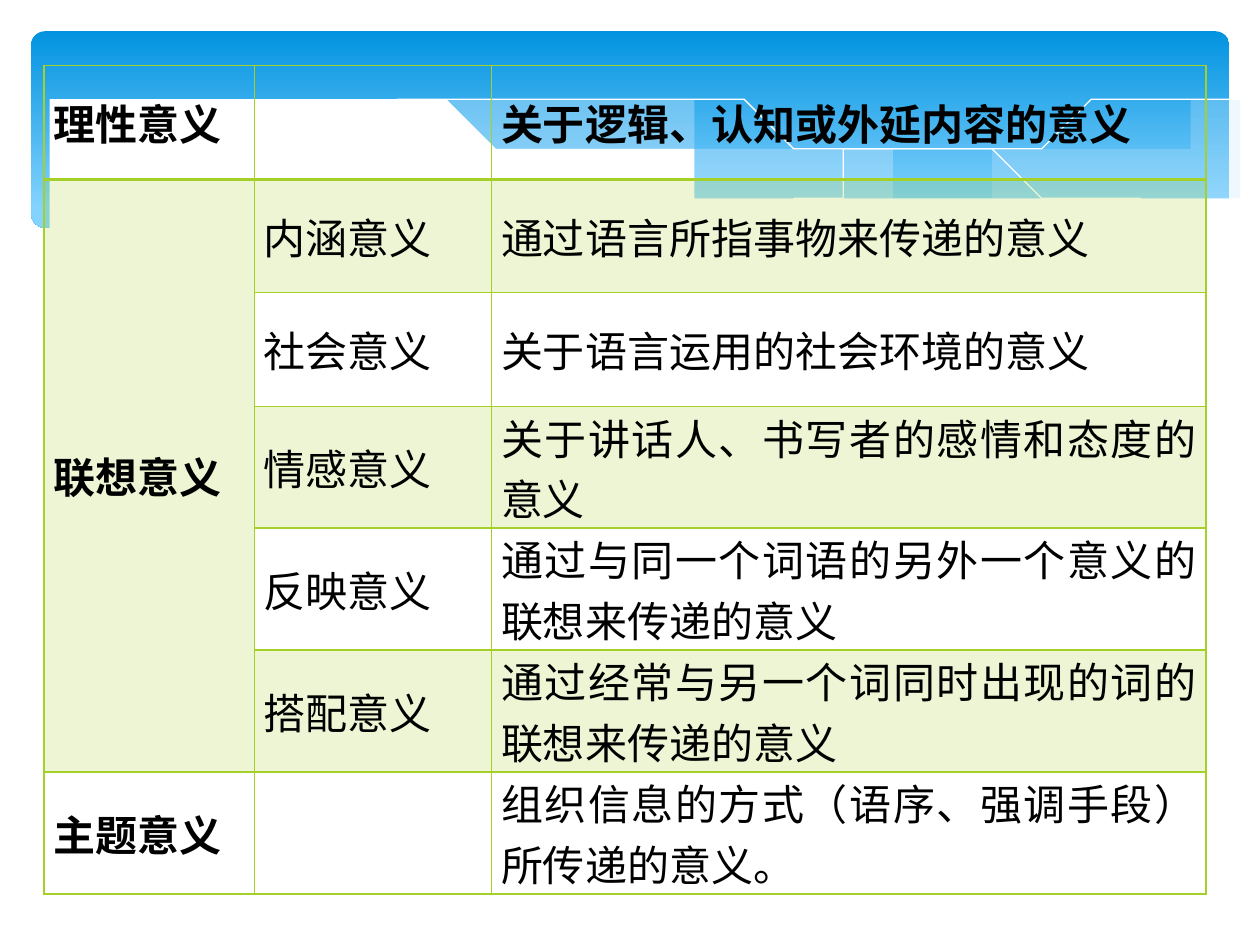
from dataclasses import dataclass
from itertools import pairwise

from lxml.etree import SubElement
from pptx import Presentation
from pptx.dml.color import RGBColor
from pptx.enum.shapes import MSO_SHAPE
from pptx.enum.text import MSO_ANCHOR, PP_ALIGN
from pptx.oxml.ns import qn
from pptx.util import Cm, Pt

Point = tuple[float, float]


@dataclass(frozen=True)
class Theme:
    font: str = "Arial"
    text_size: int = 24
    text: str = "000000"
    banner_top: str = "0293E0"
    banner_bottom: str = "83D3FE"
    mist: str = "C6E7FC"
    white: str = "FFFFFF"
    green: str = "A5D028"
    band_opacity: int = 20
    border: int = 1
    header_border: int = 2


@dataclass(frozen=True)
class Wave:
    """Smooth edges in cm, joined by straight sides; opacity in percent."""
    edges: tuple[tuple[Point, ...], ...]
    opacity: int = 100
    color: str = ""
    closed: bool = True


@dataclass(frozen=True)
class Meaning:
    group: str
    kind: str
    description: str


THEME = Theme()

WAVES = [
    Wave((((24.78, 2.39), (23.39, 2.64), (21.87, 3), (19.13, 3.63), (16.79, 4.06)),
          ((16.79, 4.06), (18.59, 4.24), (20.4, 4.37), (22.38, 4.24), (23.75, 3.96),
           (24.79, 3.58))), opacity=29, color=THEME.mist),
    Wave((((22.68, 4.24), (20.5, 3.91), (17.93, 3.4), (15.98, 2.95), (13.74, 2.46),
           (11.81, 2.18), (9.65, 2.03), (8.33, 2.06), (7.26, 2.18)),
          ((7.26, 2.18), (9.19, 2.46), (11.4, 2.95), (14.38, 3.63), (16.51, 4.01),
           (18.69, 4.29), (20.78, 4.39), (22.68, 4.24))), opacity=40, color=THEME.mist),
    Wave((((7.85, 2.29), (8.74, 2.13), (10.57, 2.06), (12.95, 2.18), (15.44, 2.49),
           (18.47, 3.05), (21.11, 3.68), (23.04, 4.22)),), color=THEME.white, closed=False),
    Wave((((15.57, 3.84), (17.65, 3.3), (19.71, 2.82), (22, 2.36), (23.47, 2.13),
           (24.77, 2.03)),), color=THEME.white, closed=False),
    Wave((((24.82, 3.58), (23.62, 3.99), (22.23, 4.24), (20.55, 4.34), (18.44, 4.24),
           (15.9, 3.89), (13.44, 3.38), (11.35, 2.9), (9.27, 2.44), (6.88, 2.08),
           (4.5, 1.98), (2.69, 2.11), (1.5, 2.36), (0.58, 2.72)),
          ((0.58, 5.69), (24.82, 5.69))), color=THEME.white),
]

MEANINGS = [
    Meaning("理性意义", "", "关于逻辑、认知或外延内容的意义"),
    Meaning("联想意义", "内涵意义", "通过语言所指事物来传递的意义"),
    Meaning("", "社会意义", "关于语言运用的社会环境的意义"),
    Meaning("", "情感意义", "关于讲话人、书写者的感情和态度的意义"),
    Meaning("", "反映意义", "通过与同一个词语的另外一个意义的联想来传递的意义"),
    Meaning("", "搭配意义", "通过经常与另一个词同时出现的词的联想来传递的意义"),
    Meaning("主题意义", "", "组织信息的方式（语序、强调手段）所传递的意义。"),
]
COLUMN_WIDTHS = (4.24, 4.78, 14.4)
ROW_HEIGHTS = (2.29,) * 3 + (2.39,) * 4
ASSOCIATIVE_ROWS = (1, 5)


def smooth(knots: tuple[Point, ...], steps: int = 5) -> list[Point]:
    """Sample a Catmull-Rom curve through the knots."""
    if len(knots) < 3:
        return list(knots)
    padded = (knots[0], *knots, knots[-1])
    points = [knots[0]]
    for index, (start, end) in enumerate(pairwise(knots)):
        before, after = padded[index], padded[index + 3]
        for step in range(1, steps + 1):
            t = step / steps
            points.append(tuple(
                b + 0.5 * t * (c - a + t * (2 * a - 5 * b + 4 * c - d
                                            + t * (3 * (b - c) + d - a)))
                for a, b, c, d in zip(before, start, end, after)))
    return points


def paint(fill, element, color: str, opacity: int = 100) -> None:
    fill.solid()
    fill.fore_color.rgb = RGBColor.from_string(color)
    if opacity < 100:
        tint = next(element.iter(qn("a:srgbClr")))
        SubElement(tint, qn("a:alpha"), val=str(opacity * 1000))


def draw_banner(page) -> None:
    banner = page.shapes.add_shape(
        MSO_SHAPE.ROUNDED_RECTANGLE, Cm(0.63), Cm(0.63), Cm(24.15), Cm(3.96))
    banner.adjustments[0] = 0.07
    banner.shadow.inherit = False
    banner.line.fill.background()
    banner.fill.gradient()
    banner.fill.gradient_angle = 270
    stops = ((0, THEME.banner_top), (0.9, THEME.banner_bottom))
    for stop, (position, color) in zip(banner.fill.gradient_stops, stops):
        stop.position = position
        stop.color.rgb = RGBColor.from_string(color)


def draw_wave(page, wave: Wave) -> None:
    points = [point for edge in wave.edges for point in smooth(edge)]
    builder = page.shapes.build_freeform(*points[0], scale=Cm(1))
    builder.add_line_segments(points[1:], close=wave.closed)
    shape = builder.convert_to_shape()
    shape.shadow.inherit = False
    if wave.closed:
        shape.line.fill.background()
        paint(shape.fill, shape._element, wave.color, wave.opacity)
    else:
        shape.fill.background()
        shape.line.color.rgb = RGBColor.from_string(wave.color)
        shape.line.width = Pt(0)


def write(cell, text: str, *, bold: bool = False) -> None:
    cell.vertical_anchor = MSO_ANCHOR.MIDDLE
    cell.margin_left = cell.margin_right = Cm(0.19)
    cell.margin_top = cell.margin_bottom = 0
    para = cell.text_frame.paragraphs[0]
    para.alignment = PP_ALIGN.JUSTIFY
    if text:
        span = para.add_run()
        span.text = text
        span.font.name = THEME.font
        span.font.size = Pt(THEME.text_size)
        span.font.bold = bold
        span.font.color.rgb = RGBColor.from_string(THEME.text)


def draw_borders(cell, row: int) -> None:
    """Outline a cell, with a heavier rule under the first row."""
    heavy_side = {0: "lnB", 1: "lnT"}.get(row)
    properties = cell._tc.get_or_add_tcPr()
    for position, side in enumerate(("lnL", "lnR", "lnT", "lnB")):
        width = THEME.header_border if side == heavy_side else THEME.border
        line = SubElement(properties, qn(f"a:{side}"), w=str(Pt(width)))
        SubElement(SubElement(line, qn("a:solidFill")), qn("a:srgbClr"), val=THEME.green)
        properties.insert(position, line)


def draw_table(page) -> None:
    frame = page.shapes.add_table(
        len(MEANINGS), len(COLUMN_WIDTHS), Cm(0.89), Cm(1.32),
        Cm(sum(COLUMN_WIDTHS)), Cm(sum(ROW_HEIGHTS)))
    table = frame.table
    for column, width in zip(table.columns, COLUMN_WIDTHS):
        column.width = Cm(width)
    for row, height in zip(table.rows, ROW_HEIGHTS):
        row.height = Cm(height)
    first, last = ASSOCIATIVE_ROWS
    table.cell(first, 0).merge(table.cell(last, 0))
    for row, meaning in enumerate(MEANINGS):
        texts = (meaning.group, meaning.kind, meaning.description)
        for column, text in enumerate(texts):
            cell = table.cell(row, column)
            write(cell, text, bold=row == 0 or column == 0)
            if row % 2:
                paint(cell.fill, cell._tc.tcPr, THEME.green, THEME.band_opacity)
            else:
                cell.fill.background()
            draw_borders(cell, row)


def main() -> None:
    deck = Presentation()
    deck.slide_width, deck.slide_height = Cm(25.4), Cm(19.05)
    page = deck.slides.add_slide(deck.slide_layouts[6])
    # Wavy header
    draw_banner(page)
    for wave in WAVES:
        draw_wave(page, wave)
    # Types of meaning
    draw_table(page)
    deck.save("out.pptx")


if __name__ == "__main__":
    main()
